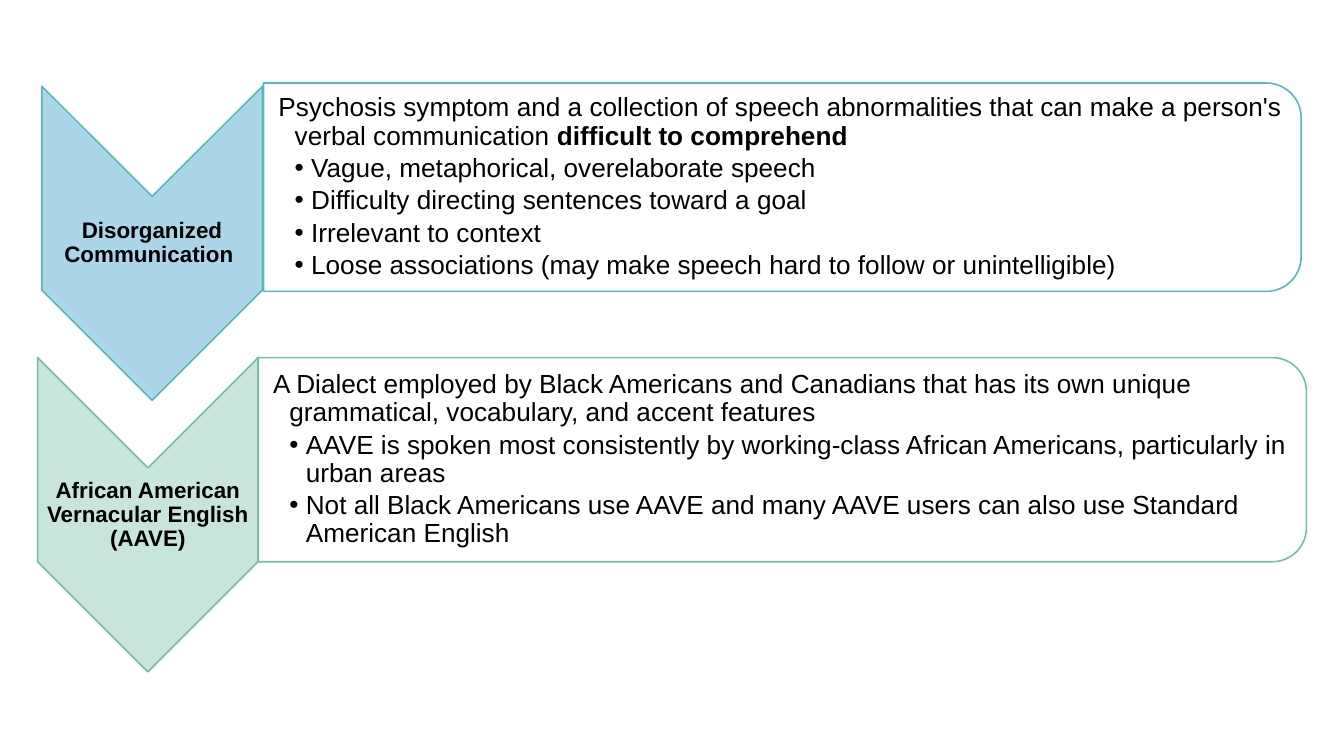
"""Build a slide defining disorganized communication and AAVE."""
from lxml import etree
from pptx import Presentation
from pptx.dml.color import RGBColor
from pptx.enum import shapes, text
from pptx.oxml import ns
from pptx.util import Cm, Pt

COLORS = {"blue": "AAD6E7", "teal": "58B6C0", "mint": "C8E5DC", "green": "75BDA7",
          "panel": "FFFFFF", "ink": "000000"}
FONT = "Arial"

TOPICS = [
    {"term": "Disorganized Communication ",
     "fill": "blue", "edge": "teal",
     "chevron": (0.79, 1.63), "panel": (4.98, 1.57, 19.61, 3.94),
     "definition": [("Psychosis symptom and a collection of speech abnormalities that can "
                     "make a person's verbal communication ", False),
                    ("difficult to comprehend", True)],
     "points": ["Vague, metaphorical, overelaborate speech",
                "Difficulty directing sentences toward a goal",
                "Irrelevant to context",
                "Loose associations (may make speech hard to follow or unintelligible)"]},
    {"term": "African American Vernacular English (AAVE)",
     "fill": "mint", "edge": "green",
     "chevron": (0.71, 6.76), "panel": (4.88, 6.76, 19.81, 3.86),
     "definition": [("A Dialect employed by Black Americans and Canadians that has its own "
                     "unique grammatical, vocabulary, and accent features", False)],
     "points": ["AAVE is spoken most consistently by working-class African Americans, "
                "particularly in urban areas",
                "Not all Black Americans use AAVE and many AAVE users can also use "
                "Standard American English"]},
]

CHEVRON_WIDTH, CHEVRON_HEIGHT = 4.17, 5.94
TERM_HEIGHT = 1.78
PANEL_INSET = 0.19
HANGING = 0.31


def add_turned(slide, kind, box, fill, edge):
    left, top, width, height = box
    turned = slide.shapes.add_shape(
        kind, Cm(left + (width - height) / 2), Cm(top + (height - width) / 2),
        Cm(height), Cm(width))
    turned.rotation = 90
    turned.shadow.inherit = False
    turned.fill.solid()
    turned.fill.fore_color.rgb = RGBColor.from_string(COLORS[fill])
    turned.line.color.rgb = RGBColor.from_string(COLORS[edge])
    turned.line.width = Pt(0.85)
    return turned


def make_translucent(panel, percent):
    color = panel.fill._xPr.find(".//" + ns.qn("a:srgbClr"))
    etree.SubElement(color, ns.qn("a:alpha"), val=str(percent * 1000))


def set_frame(frame, left_margin):
    frame.word_wrap = True
    frame.auto_size = text.MSO_AUTO_SIZE.NONE
    frame.vertical_anchor = text.MSO_ANCHOR.MIDDLE
    frame.margin_left = Cm(left_margin)
    frame.margin_right = frame.margin_top = frame.margin_bottom = Cm(0.03)


def write(paragraph, runs, size, align, after):
    paragraph.alignment = align
    paragraph.line_spacing = 0.9
    paragraph.space_before = Pt(0)
    paragraph.space_after = Pt(after)
    for words, bold in runs:
        run = paragraph.add_run()
        run.text = words
        run.font.name, run.font.size, run.font.bold = FONT, Pt(size), bold
        run.font.color.rgb = RGBColor.from_string(COLORS["ink"])


def set_bullet(paragraph, level, bullet):
    paragraph.level = level
    properties = paragraph._p.get_or_add_pPr()
    properties.set("marL", str(Cm(HANGING * level)))
    properties.set("indent", str(-Cm(HANGING)))
    if bullet:
        etree.SubElement(properties, ns.qn("a:buChar"), char=bullet)
    else:
        etree.SubElement(properties, ns.qn("a:buNone"))


def add_topic(slide, details, topic):
    left, top = topic["chevron"]
    add_turned(slide, shapes.MSO_SHAPE.CHEVRON, (left, top, CHEVRON_WIDTH, CHEVRON_HEIGHT),
               topic["fill"], topic["edge"])
    term = slide.shapes.add_textbox(Cm(left), Cm(top + CHEVRON_WIDTH / 2),
                                    Cm(CHEVRON_WIDTH), Cm(TERM_HEIGHT))
    set_frame(term.text_frame, 0.03)
    write(term.text_frame.paragraphs[0], [(topic["term"], True)], 12, text.PP_ALIGN.CENTER, 0)

    panel = add_turned(slide, shapes.MSO_SHAPE.ROUND_2_SAME_RECTANGLE, topic["panel"],
                       "panel", topic["edge"])
    make_translucent(panel, 90)

    left, top, width, height = topic["panel"]
    details.left, details.top = Cm(left), Cm(top + PANEL_INSET)
    details.width, details.height = Cm(width - PANEL_INSET), Cm(height - 2 * PANEL_INSET)
    panel._element.addnext(details._element)
    frame = details.text_frame
    set_frame(frame, 0.28)
    entries = [(topic["definition"], 1, None)]
    entries += [([(point, False)], 2, "•") for point in topic["points"]]
    for index, (runs, level, bullet) in enumerate(entries):
        paragraph = frame.add_paragraph() if index else frame.paragraphs[0]
        write(paragraph, runs, 14, text.PP_ALIGN.LEFT, 2.2)
        set_bullet(paragraph, level, bullet)


def main():
    deck = Presentation()
    deck.slide_width, deck.slide_height = Cm(25.4), Cm(14.29)
    slide = deck.slides.add_slide(deck.slide_layouts[3])
    title, *details = list(slide.placeholders)[:3]
    title._element.getparent().remove(title._element)
    for body, topic in zip(details, TOPICS):
        add_topic(slide, body, topic)
    deck.save("out.pptx")


if __name__ == "__main__":
    main()
